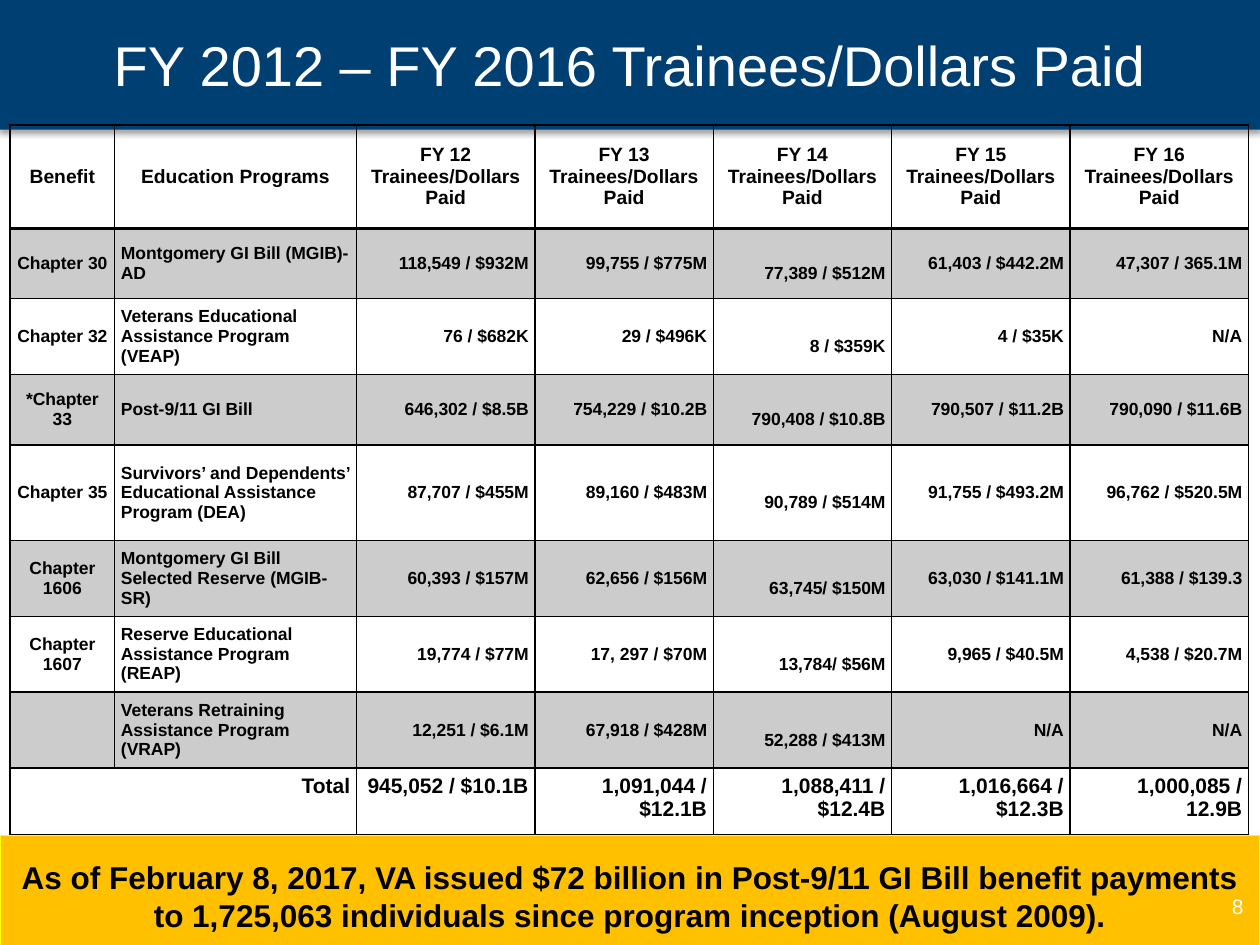
from lxml.etree import SubElement
from pptx import Presentation
from pptx.dml.color import RGBColor
from pptx.enum.shapes import MSO_SHAPE
from pptx.enum.text import MSO_ANCHOR, PP_ALIGN
from pptx.oxml.ns import qn
from pptx.util import Inches, Pt

COLUMNS, ROWS = 100, 75
BLACK, WHITE, NAVY, GOLD, YELLOW = "000000", "FFFFFF", "003F72", "FFC000", "FFFF00"
INSET = 0.5
CENTER, LEFT, RIGHT = PP_ALIGN.CENTER, PP_ALIGN.LEFT, PP_ALIGN.RIGHT

YEARS = [12, 13, 14, 15, 16]
LOWERED_YEAR = 14
BENEFITS = [
    ("Chapter 30", "Montgomery GI Bill (MGIB)-AD", "118,549 / $932M", "99,755 / $775M",
     "77,389 / $512M", "61,403 / $442.2M", "47,307 / 365.1M"),
    ("Chapter 32", "Veterans Educational Assistance Program (VEAP)", "76 / $682K", "29 / $496K",
     "8 / $359K", "4 / $35K", "N/A"),
    ("*Chapter 33", "Post-9/11 GI Bill", "646,302 / $8.5B", "754,229 / $10.2B",
     "790,408 / $10.8B", "790,507 / $11.2B", "790,090 / $11.6B"),
    ("Chapter 35", "Survivors’ and Dependents’ Educational Assistance Program (DEA)",
     "87,707 / $455M", "89,160 / $483M", "90,789 / $514M", "91,755 / $493.2M", "96,762 / $520.5M"),
    ("Chapter 1606", "Montgomery GI Bill Selected Reserve (MGIB-SR)", "60,393 / $157M",
     "62,656 / $156M", "63,745/ $150M", "63,030 / $141.1M", "61,388 / $139.3"),
    ("Chapter 1607", "Reserve Educational Assistance Program (REAP)", "19,774 / $77M",
     "17, 297 / $70M", "13,784/ $56M", "9,965 / $40.5M", "4,538 / $20.7M"),
    ("", "Veterans Retraining Assistance Program (VRAP)", "12,251 / $6.1M", "67,918 / $428M",
     "52,288 / $413M", "N/A", "N/A"),
]
TOTALS = ["945,052 / $10.1B", "1,091,044 / $12.1B", "1,088,411 / $12.4B",
          "1,016,664 / $12.3B", "1,000,085 / 12.9B"]
HEIGHTS = [8.2, 5.6, 5.9, 5.6, 7.6, 5.9, 5.9, 5.9, 5.3]


def color(value):
    return RGBColor.from_string(value)


class SlideBuilder:
    def __init__(self, deck, font="Arial"):
        self.font = font
        self.column = deck.slide_width / COLUMNS
        self.row = deck.slide_height / ROWS
        self.slide = deck.slides.add_slide(deck.slide_layouts[6])

    def place(self, left, top, width, height):
        return (round(left * self.column), round(top * self.row),
                round(width * self.column), round(height * self.row))

    def add_words(self, frame, words, size, ink, bold, align):
        paragraph = frame.paragraphs[0]
        paragraph.alignment = align
        paragraph.font.size = Pt(size)
        if words:
            run = paragraph.add_run()
            run.text = words
            run.font.name = self.font
            run.font.size = Pt(size)
            run.font.bold = bold
            run.font.color.rgb = color(ink)

    def inset(self, holder, top=INSET):
        holder.margin_left = holder.margin_right = round(INSET * self.column)
        holder.margin_top = round(top * self.row)
        holder.margin_bottom = round(INSET * self.row)

    def band(self, area, fill, outline=None):
        band = self.slide.shapes.add_shape(MSO_SHAPE.RECTANGLE, *self.place(*area))
        band.shadow.inherit = False
        band.fill.solid()
        band.fill.fore_color.rgb = color(fill)
        if outline:
            band.line.color.rgb = color(outline)
            band.line.width = Pt(0.75)
        else:
            band.line.fill.background()
        effects = band._element.spPr.find(qn("a:effectLst"))
        shadow = SubElement(effects, qn("a:outerShdw"), blurRad=str(Pt(3)), dist=str(Pt(1.8)),
                            dir="5400000", rotWithShape="0")
        ink = SubElement(shadow, qn("a:srgbClr"), val=BLACK)
        SubElement(ink, qn("a:alpha"), val="35000")

    def text(self, area, words, size, ink, bold=False, align=CENTER, wrap=True):
        frame = self.slide.shapes.add_textbox(*self.place(*area)).text_frame
        frame.word_wrap = wrap
        frame.vertical_anchor = MSO_ANCHOR.MIDDLE
        self.inset(frame)
        self.add_words(frame, words, size, ink, bold, align)

    def table(self, area, widths, heights):
        table = self.slide.shapes.add_table(len(heights), len(widths), *self.place(*area)).table
        table.first_row = table.horz_banding = False
        for column, width in zip(table.columns, widths):
            column.width = round(width * self.column)
        for row, height in zip(table.rows, heights):
            row.height = round(height * self.row)
        return table

    def cell(self, cell, words, size, align, anchor=MSO_ANCHOR.MIDDLE, shaded=False,
             above=1, below=1, top=INSET):
        self.inset(cell, top)
        cell.vertical_anchor = anchor
        self.add_words(cell.text_frame, words, size, BLACK, True, align)
        properties = cell._tc.get_or_add_tcPr()
        for side, weight in (("lnL", 1), ("lnR", 1), ("lnT", above), ("lnB", below)):
            border = SubElement(properties, qn("a:" + side), w=str(Pt(weight)))
            SubElement(SubElement(border, qn("a:solidFill")), qn("a:srgbClr"), val=BLACK)
        if shaded:
            cell.fill.solid()
            cell.fill.fore_color.rgb = color(BLACK)
            ink = properties.find(qn("a:solidFill")).find(qn("a:srgbClr"))
            SubElement(ink, qn("a:alpha"), val="20000")
        else:
            cell.fill.background()


def fill_benefits(builder, table):
    headings = ["Benefit", "Education Programs"]
    headings += [f"FY {year} Trainees/Dollars Paid" for year in YEARS]
    for column, heading in enumerate(headings):
        builder.cell(table.cell(0, column), heading, 11, CENTER, below=2)

    lowered = 2 + YEARS.index(LOWERED_YEAR)
    aligns = [CENTER, LEFT] + [RIGHT] * len(YEARS)
    for row, benefit in enumerate(BENEFITS, 1):
        for column, (words, align) in enumerate(zip(benefit, aligns)):
            builder.cell(table.cell(row, column), words, 10, align, shaded=row % 2 == 1,
                         above=2 if row == 1 else 1,
                         top=INSET + 1.6 if column == lowered else INSET)

    last = len(BENEFITS) + 1
    table.cell(last, 0).merge(table.cell(last, 1))
    for column, words in enumerate(["Total", ""] + TOTALS):
        builder.cell(table.cell(last, column), words, 12, RIGHT, MSO_ANCHOR.TOP)


def main():
    deck = Presentation()
    deck.slide_width, deck.slide_height = Inches(10), Inches(7.5)
    builder = SlideBuilder(deck)

    builder.band((0, 0, COLUMNS, 10.3), NAVY)
    builder.text((5, 0, 90, 10.2), "FY 2012 – FY 2016 Trainees/Dollars Paid", 32, WHITE)

    builder.band((0, 66.3, COLUMNS, 9.5), GOLD, YELLOW)
    builder.text((0, 67.7, COLUMNS, 6.8),
                 "As of February 8, 2017, VA issued $72 billion in Post-9/11 GI Bill benefit "
                 "payments to 1,725,063 individuals since program inception (August 2009).",
                 18, BLACK, bold=True)

    table_width, benefit_width, program_width = 98.3, 8.3, 19.2
    year_width = (table_width - benefit_width - program_width) / len(YEARS)
    widths = [benefit_width, program_width] + [year_width] * len(YEARS)
    table = builder.table((0.8, 9.9, table_width, sum(HEIGHTS)), widths, HEIGHTS)
    fill_benefits(builder, table)

    builder.text((97.2, 70.5, 2, 2.9), "8", 12, WHITE, align=RIGHT, wrap=False)
    deck.save("out.pptx")


if __name__ == "__main__":
    main()
